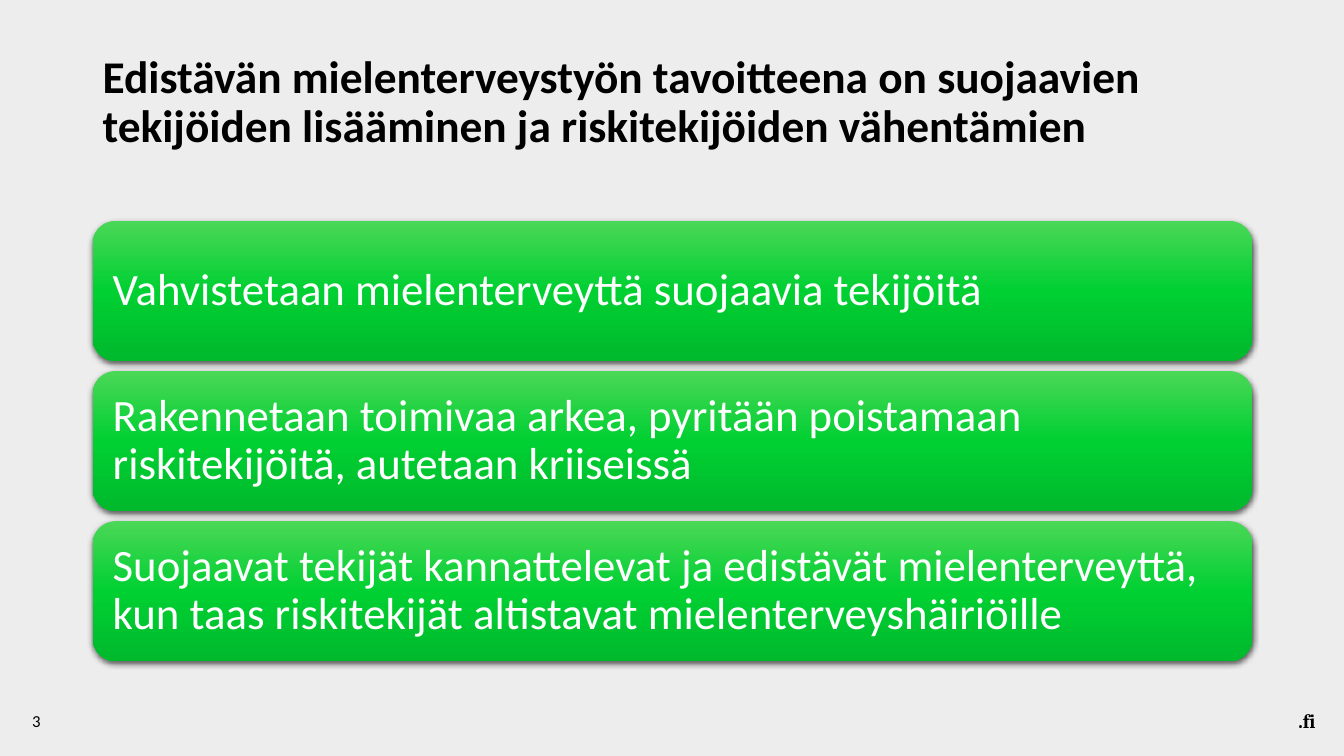
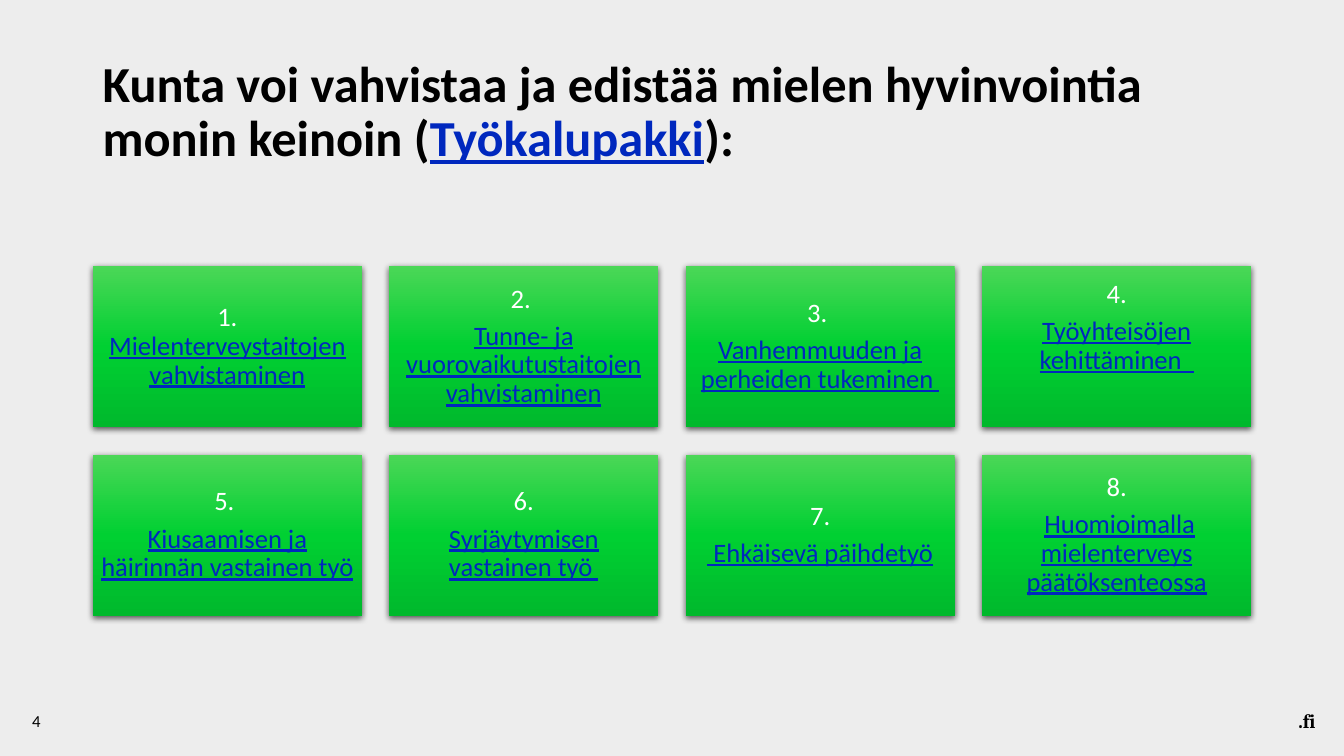
from pptx import Presentation
from pptx.dml.color import RGBColor
from pptx.enum.shapes import MSO_SHAPE
from pptx.enum.text import MSO_ANCHOR, PP_ALIGN
from pptx.oxml import parse_xml
from pptx.oxml.ns import nsdecls, qn
from pptx.util import Inches, Pt

BACKGROUND, BLACK, WHITE, LINK_BLUE = "EDEDED", "000000", "FFFFFF", "0028BE"
GREEN_STOPS = ((0, "4BD757"), (50, "00D032"), (100, "00B92C"))
LINK = {"color": LINK_BLUE, "underline": True}
MARGIN, CONTENT_WIDTH = 0.92, 11.5


def rgb(value):
    return RGBColor.from_string(value)


class Deck:
    """Holds the shared style and the slide being built."""

    title = {"name": "Calibri", "bold": True, "color": BLACK}
    number = {"name": "Calibri", "size": Pt(12), "color": BLACK}
    domain = {"name": "Cambria", "size": Pt(14), "bold": True, "color": BLACK}
    card = {"name": "Calibri", "color": WHITE}

    def __init__(self):
        self.prs = Presentation()
        self.prs.slide_width, self.prs.slide_height = Inches(13.33), Inches(7.5)
        self.slide = None

    def add_slide(self, number):
        self.slide = self.prs.slides.add_slide(self.prs.slide_layouts[6])
        fill = self.slide.background.fill
        fill.solid()
        fill.fore_color.rgb = rgb(BACKGROUND)
        self.add_text((12.78, 6.98, 0.46, 0.34), [[(".fi", {})]], self.domain, wrap=False)
        self.add_text((0.22, 6.95, 0.97, 0.4), [[(number, {})]], self.number)

    def add_title(self, top, size, runs):
        style = {**self.title, "size": Pt(size)}
        self.add_text((MARGIN, top, CONTENT_WIDTH, 1.45), [runs], style, spacing=0.9)

    def add_text(self, box, paragraphs, style, wrap=True, spacing=None):
        frame = self.slide.shapes.add_textbox(*map(Inches, box)).text_frame
        frame.word_wrap = wrap
        frame.vertical_anchor = MSO_ANCHOR.MIDDLE
        self.fill_frame(frame, paragraphs, style, {"line_spacing": spacing})

    def add_card(self, kind, box, paragraphs, size, align, inset, raise_text=0):
        shape = self.slide.shapes.add_shape(kind, *map(Inches, box))
        shape.line.fill.background()
        shape.shadow.inherit = False
        self.shade(shape)
        frame = shape.text_frame
        layout = {"word_wrap": True, "vertical_anchor": MSO_ANCHOR.MIDDLE,
                  "margin_bottom": Inches(inset + raise_text)}
        for side in ("left", "right", "top"):
            layout["margin_" + side] = Inches(inset)
        for key, value in layout.items():
            setattr(frame, key, value)
        self.fill_frame(frame, paragraphs, {**self.card, "size": Pt(size)},
                        {"line_spacing": 0.9, "space_after": Pt(round(size / 3)),
                         "alignment": align})

    @staticmethod
    def shade(shape):
        """Vertical green gradient and a soft shadow below."""
        stops = "".join(f'<a:gs pos="{pos * 1000}"><a:srgbClr val="{color}"/></a:gs>'
                        for pos, color in GREEN_STOPS)
        properties = shape.element.spPr
        properties.find(qn("a:prstGeom")).addnext(parse_xml(
            f'<a:gradFill {nsdecls("a")} rotWithShape="1"><a:gsLst>{stops}</a:gsLst>'
            '<a:lin ang="5400000" scaled="0"/></a:gradFill>'))
        properties.find(qn("a:effectLst")).append(parse_xml(
            f'<a:outerShdw {nsdecls("a")} blurRad="{Pt(4.5)}" dist="{Pt(1.5)}" dir="5400000" '
            f'algn="ctr" rotWithShape="0"><a:srgbClr val="{BLACK}"><a:alpha val="63000"/>'
            '</a:srgbClr></a:outerShdw>'))

    @staticmethod
    def fill_frame(frame, paragraphs, style, layout):
        for index, runs in enumerate(paragraphs):
            paragraph = frame.add_paragraph() if index else frame.paragraphs[0]
            for key, value in layout.items():
                setattr(paragraph, key, value)
            for text, changes in runs:
                run = paragraph.add_run()
                run.text = text
                for key, value in {**style, **changes}.items():
                    if key == "color":
                        run.font.color.rgb = rgb(value)
                    else:
                        setattr(run.font, key, value)


def build_goals(deck):
    deck.add_slide("3")
    deck.add_title(0.3, 32.4, [("Edistävän mielenterveystyön tavoitteena on suojaavien "
                                "tekijöiden lisääminen ja riskitekijöiden vähentämien", {})])
    goals = (
        "Vahvistetaan mielenterveyttä suojaavia tekijöitä",
        "Rakennetaan toimivaa arkea, pyritään poistamaan riskitekijöitä, autetaan kriiseissä",
        "Suojaavat tekijät kannattelevat ja edistävät mielenterveyttä, "
        "kun taas riskitekijät altistavat mielenterveyshäiriöille",
    )
    height, gap = 1.39, 0.1
    for row, goal in enumerate(goals):
        box = (MARGIN, 2.19 + row * (height + gap), CONTENT_WIDTH, height)
        deck.add_card(MSO_SHAPE.ROUNDED_RECTANGLE, box, [[(goal, {})]], 32, PP_ALIGN.LEFT, 0.13)


def build_means(deck):
    deck.add_slide("4")
    deck.add_title(0.4, 36, [("Kunta voi vahvistaa ja edistää mielen hyvinvointia monin keinoin (", {}),
                             ("Työkalupakki", LINK), ("):", {})])
    # Each means: paragraphs of runs
    means = (
        [[("1. ", {}), ("Mielenterveystaitojen vahvistaminen", LINK)]],
        [[("2. ", {})], [("Tunne- ja vuorovaikutustaitojen vahvistaminen", LINK)]],
        [[("3. ", {})], [("Vanhemmuuden ja perheiden tukeminen ", LINK)]],
        [[("4.", {})], [("Työyhteisöjen kehittäminen  ", LINK)]],
        [[("5. ", {})], [("Kiusaamisen ja häirinnän vastainen työ", LINK)]],
        [[("6.", {})], [("Syrjäytymisen vastainen työ ", LINK)]],
        [[("7.", {})], [(" Ehkäisevä päihdetyö", LINK)]],
        [[("8.", {})], [(" ", {}), ("Huomioimalla mielenterveys päätöksenteossa", LINK)]],
    )
    columns, width, height, gap = 4, 2.67, 1.6, 0.27
    workplace = 3  # its text sits higher than in the other cards
    for index, paragraphs in enumerate(means):
        row, column = divmod(index, columns)
        box = (MARGIN + column * (width + gap), 2.64 + row * (height + gap), width, height)
        deck.add_card(MSO_SHAPE.RECTANGLE, box, paragraphs, 19, PP_ALIGN.CENTER, 0.08,
                      raise_text=0.38 if index == workplace else 0)


def main():
    deck = Deck()
    build_goals(deck)
    build_means(deck)
    deck.prs.save("out.pptx")


if __name__ == "__main__":
    main()
